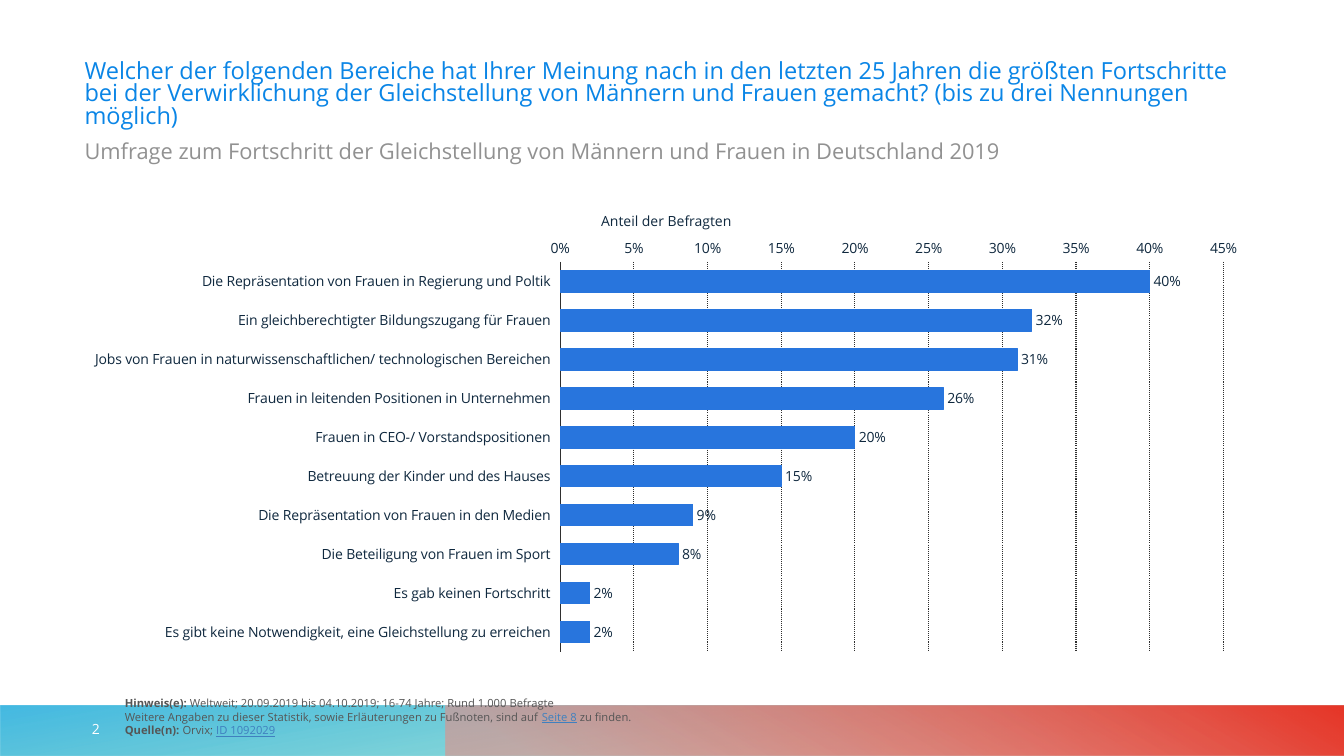
"""Build a survey slide with a bar chart on progress in gender equality."""
from dataclasses import dataclass

from lxml import etree
from pptx import Presentation
from pptx import util as u
from pptx.chart import data as cd
from pptx.dml import color as dc
from pptx.enum import chart as ec, dml, shapes, text
from pptx.oxml import ns

Pt = u.Pt
FONT = "Open Sans"
HUES = {
    "title": "0A85E6", "sub": "919191", "note": "555555", "link": "3F80BF",
    "ink": "0F283E", "axis": "2F2F2F", "bar": "2875DD", "white": "FFFFFF",
    "teal": "14B59C", "sky": "23ADDE", "pink": "F1877F", "red": "E73729",
}


@dataclass
class Run:
    text: str
    hue: str
    bold: bool = False
    line: bool = False


@dataclass
class Label:
    box: tuple[float, float, float, float]
    size: float
    rows: list[list[Run]]
    low: bool = False
    mid: bool = False
    gap: float = 1


@dataclass
class Band:
    box: tuple[float, float, float, float]
    turn: int
    angle: int
    stops: list[tuple[str, float, int]]


BANDS = [
    Band((0, 504, 960, 36), 180, 100, [("teal", 0.14, 28), ("sky", 1, 85)]),
    Band((318, 504, 642, 36), 0, 240, [("pink", 0.09, 55), ("red", 0.99, 100)]),
]
LABELS = [
    Label((53.3, 49.7, 853.2, 46.1), 16.8, [[Run(
        "Welcher der folgenden Bereiche hat Ihrer Meinung nach in den letzten 25 Jahren "
        "die größten Fortschritte bei der Verwirklichung der Gleichstellung von Männern "
        "und Frauen gemacht? (bis zu drei Nennungen möglich)", "title")]], low=True, gap=0.8),
    Label((53.3, 97.2, 853.2, 25.9), 15.6, [[Run(
        "Umfrage zum Fortschritt der Gleichstellung von Männern und Frauen in "
        "Deutschland 2019", "sub")]], gap=0.9),
    Label((82.1, 471.6, 652.3, 58.3), 8, [
        [Run("Hinweis(e):", "note", bold=True),
         Run(" Weltweit; 20.09.2019 bis 04.10.2019; 16-74 Jahre; Rund 1.000 Befragte", "note")],
        [Run("Weitere Angaben zu dieser Statistik, sowie Erläuterungen zu Fußnoten, "
             "sind auf ", "note"),
         Run("Seite 8", "link", line=True), Run(" zu finden.", "note")],
        [Run("Quelle(n): ", "note", bold=True), Run("Orvix; ", "note"),
         Run("ID 1092029", "link", line=True)],
    ], low=True),
    Label((398.9, 148.3, 154.1, 17.3), 10, [[Run("Anteil der Befragten", "ink")]], mid=True),
    Label((50.4, 511.2, 36, 19.4), 10, [[Run("2", "white")]], mid=True),
]
SHARES = {
    "Die Repräsentation von Frauen in Regierung und Poltik": 0.4,
    "Ein gleichberechtigter Bildungszugang für Frauen": 0.32,
    "Jobs von Frauen in naturwissenschaftlichen/ technologischen Bereichen": 0.31,
    "Frauen in leitenden Positionen in Unternehmen": 0.26,
    "Frauen in CEO-/ Vorstandspositionen": 0.2,
    "Betreuung der Kinder und des Hauses": 0.15,
    "Die Repräsentation von Frauen in den Medien": 0.09,
    "Die Beteiligung von Frauen im Sport": 0.08,
    "Es gab keinen Fortschritt": 0.02,
    "Es gibt keine Notwendigkeit, eine Gleichstellung zu erreichen": 0.02,
}
PLOT = {"x": 0.41, "y": 0.07, "w": 0.56, "h": 0.91}


def rgb(hue: str) -> dc.RGBColor:
    return dc.RGBColor.from_string(HUES[hue])


def style(font, size: float, hue: str) -> None:
    font.name = FONT
    font.size = Pt(size)
    font.color.rgb = rgb(hue)


def stroke(line, hue: str) -> None:
    line.color.rgb = rgb(hue)
    line.width = Pt(0.75)


def draw_band(slide, band: Band) -> None:
    shape = slide.shapes.add_shape(shapes.MSO_SHAPE.RECTANGLE, *map(Pt, band.box))
    shape.shadow.inherit = False
    shape.line.fill.background()
    shape.rotation = band.turn
    shape.element.spPr.find(ns.qn("a:xfrm")).set("flipH", "1")
    shape.fill.gradient()
    shape.fill.gradient_angle = 360 - band.angle
    nodes = shape.element.spPr.iter(ns.qn("a:gs"))
    for stop, node, (hue, pos, alpha) in zip(shape.fill.gradient_stops, nodes, band.stops):
        stop.color.rgb = rgb(hue)
        stop.position = pos
        etree.SubElement(node[0], ns.qn("a:alpha")).set("val", str(alpha * 1000))


def draw_label(slide, label: Label) -> None:
    frame = slide.shapes.add_textbox(*map(Pt, label.box)).text_frame
    frame.word_wrap = True
    if label.low:
        frame.vertical_anchor = text.MSO_ANCHOR.BOTTOM
    for i, row in enumerate(label.rows):
        para = frame.add_paragraph() if i else frame.paragraphs[0]
        para.line_spacing = label.gap
        if label.mid:
            para.alignment = text.PP_ALIGN.CENTER
        for item in row:
            run = para.add_run()
            run.text = item.text
            style(run.font, label.size, item.hue)
            run.font.bold = item.bold
            run.font.underline = item.line


def place_plot(chart) -> None:
    area = chart.plots[0]._element.getparent()
    for old in area.findall(ns.qn("c:layout")):
        area.remove(old)
    outer = etree.Element(ns.qn("c:layout"))
    area.insert(0, outer)
    inner = etree.SubElement(outer, ns.qn("c:manualLayout"))
    rules = {"layoutTarget": "inner", "xMode": "edge", "yMode": "edge", **PLOT}
    for key, val in rules.items():
        etree.SubElement(inner, ns.qn(f"c:{key}")).set("val", str(val))


def draw_chart(slide) -> None:
    data = cd.CategoryChartData(number_format="0%")
    data.categories = list(SHARES)
    data.add_series("Anteil der Befragten", list(SHARES.values()))
    chart = slide.shapes.add_chart(
        ec.XL_CHART_TYPE.BAR_CLUSTERED, *map(Pt, (53.3, 165.6, 846, 306)), data).chart
    chart.has_legend = chart.has_title = False
    style(chart.font, 10, "ink")
    place_plot(chart)

    plot = chart.plots[0]
    plot.gap_width, plot.overlap, plot.vary_by_categories = 80, -30, False
    bars = plot.series[0]
    bars.format.fill.solid()
    bars.format.fill.fore_color.rgb = rgb("bar")
    stroke(bars.format.line, "bar")
    plot.has_data_labels = True
    tags = plot.data_labels
    tags.show_value = True
    tags.number_format, tags.number_format_is_linked = "0%", False
    tags.position = ec.XL_LABEL_POSITION.OUTSIDE_END
    style(tags.font, 10, "ink")

    cats, vals = chart.category_axis, chart.value_axis
    for axis in (cats, vals):
        axis.major_tick_mark = axis.minor_tick_mark = ec.XL_TICK_MARK.NONE
        style(axis.tick_labels.font, 10, "ink")
    cats.reverse_order = True
    cats.tick_label_position = ec.XL_TICK_LABEL_POSITION.LOW
    stroke(cats.format.line, "axis")
    vals.minimum_scale, vals.maximum_scale, vals.major_unit = 0, 0.45, 0.05
    vals.tick_labels.number_format = "#,##0%"
    vals.tick_labels.number_format_is_linked = False
    vals.format.line.fill.background()
    vals.has_major_gridlines = True
    grid = vals.major_gridlines.format.line
    stroke(grid, "axis")
    grid.dash_style = dml.MSO_LINE.ROUND_DOT


def main() -> None:
    deck = Presentation()
    deck.slide_width, deck.slide_height = Pt(960), Pt(540)
    slide = deck.slides.add_slide(deck.slide_layouts[6])
    for band in BANDS:
        draw_band(slide, band)
    draw_chart(slide)
    for label in LABELS:
        draw_label(slide, label)
    deck.save("out.pptx")


if __name__ == "__main__":
    main()
